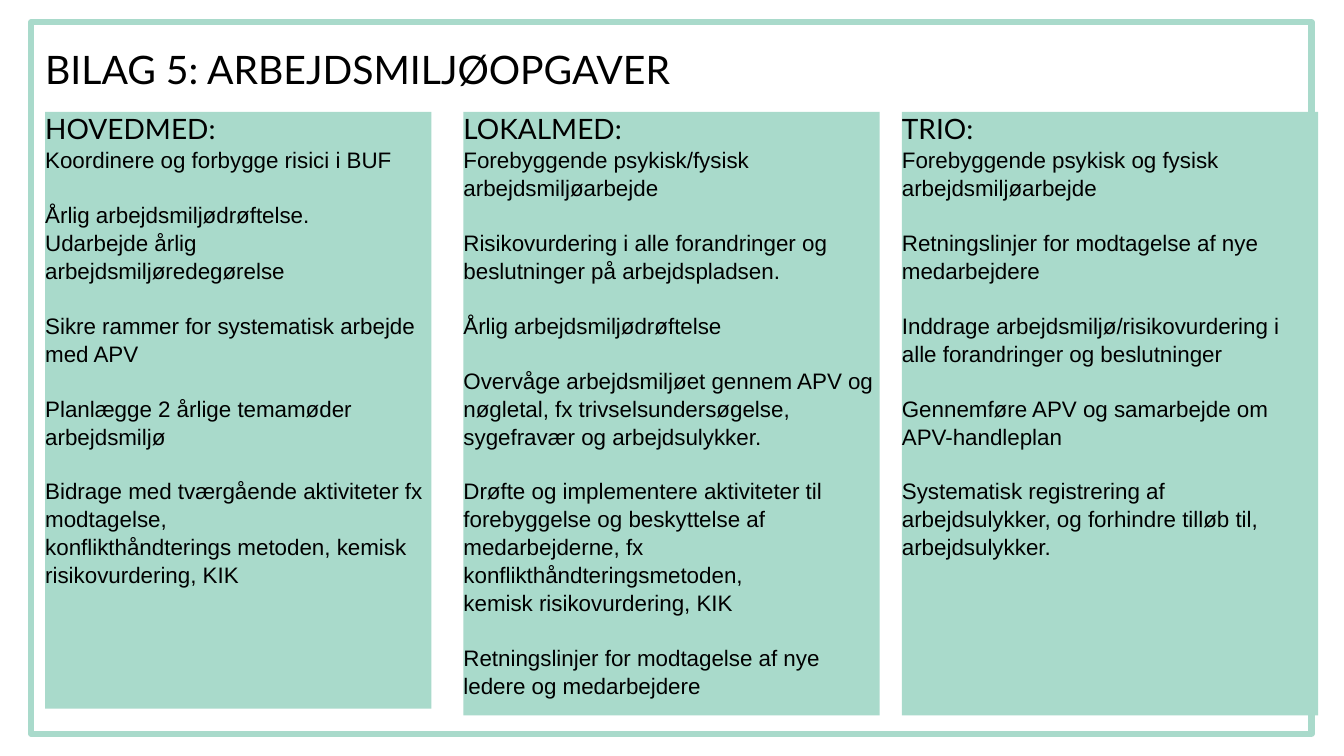
from pptx import Presentation
from pptx.dml.color import RGBColor
from pptx.enum.shapes import MSO_SHAPE
from pptx.enum.text import MSO_ANCHOR, PP_ALIGN
from pptx.util import Cm, Pt

RECTANGLE = MSO_SHAPE.RECTANGLE
TOP = MSO_ANCHOR.TOP
LEFT = PP_ALIGN.LEFT

COLORS = {"mint": "A9DACB", "text": "000000"}
HEADING_FONT = "Lato"
BODY_FONT = "Arial"
BODY_SIZE = 16
LINE_SPACING = 1.04
TASK_GAP = Pt(19.2)
COLUMN_TOP = 2.82

# Left, width and height in cm, heading, tasks; each task is a list of paragraphs.
COLUMNS = [
    (1.14, 9.73, 15.04, "HOVEDMED:", [
        ["Koordinere og forbygge risici i BUF"],
        ["Årlig arbejdsmiljødrøftelse.",
         "Udarbejde årlig arbejdsmiljøredegørelse"],
        ["Sikre rammer for systematisk arbejde med APV"],
        ["Planlægge 2 årlige temamøder arbejdsmiljø"],
        ["Bidrage med tværgående aktiviteter fx modtagelse,",
         "konflikthåndterings metoden, kemisk risikovurdering, KIK"],
    ]),
    (11.68, 10.49, 15.21, "LOKALMED:", [
        ["Forebyggende psykisk/fysisk arbejdsmiljøarbejde"],
        ["Risikovurdering i alle forandringer og",
         "beslutninger på arbejdspladsen."],
        ["Årlig arbejdsmiljødrøftelse"],
        ["Overvåge arbejdsmiljøet gennem APV og nøgletal, "
         "fx trivselsundersøgelse, sygefravær og arbejdsulykker."],
        ["Drøfte og implementere aktiviteter til forebyggelse og beskyttelse "
         "af medarbejderne, fx konflikthåndteringsmetoden,",
         "kemisk risikovurdering, KIK"],
        ["Retningslinjer for modtagelse af nye ledere og medarbejdere"],
    ]),
    (22.73, 10.49, 15.21, "TRIO:", [
        ["Forebyggende psykisk og fysisk arbejdsmiljøarbejde"],
        ["Retningslinjer for modtagelse af nye medarbejdere"],
        ["Inddrage arbejdsmiljø/risikovurdering i alle forandringer "
         "og beslutninger"],
        ["Gennemføre APV og samarbejde om APV-handleplan"],
        ["Systematisk registrering af arbejdsulykker, og forhindre tilløb til, "
         "arbejdsulykker."],
    ]),
]


def color(name):
    return RGBColor.from_string(COLORS[name])


def prepare_text_frame(shape):
    """Make the text wrap, start at the top and fill the shape without margins."""
    text_frame = shape.text_frame
    text_frame.word_wrap = True
    text_frame.vertical_anchor = TOP
    text_frame.margin_left = text_frame.margin_right = 0
    text_frame.margin_top = text_frame.margin_bottom = 0
    return text_frame


def write_paragraph(paragraph, text, font_name, size):
    paragraph.text = text
    paragraph.alignment = LEFT
    paragraph.font.name = font_name
    paragraph.font.size = Pt(size)
    paragraph.font.color.rgb = color("text")


def add_rectangle(slide, left, top, width, height):
    shape = slide.shapes.add_shape(
        RECTANGLE, Cm(left), Cm(top), Cm(width), Cm(height))
    shape.shadow.inherit = False
    return shape


def add_frame(slide):
    frame = add_rectangle(slide, 0.79, 0.56, 32.26, 17.93)
    frame.fill.background()
    frame.line.color.rgb = color("mint")
    frame.line.width = Pt(4.5)


def add_title(slide, text):
    title = slide.shapes.add_textbox(Cm(1.14), Cm(1.14), Cm(23.42), Cm(1.19))
    text_frame = prepare_text_frame(title)
    write_paragraph(text_frame.paragraphs[0], text, HEADING_FONT, 28)


def add_column(slide, left, width, height, heading, tasks):
    column = add_rectangle(slide, left, COLUMN_TOP, width, height)
    column.fill.solid()
    column.fill.fore_color.rgb = color("mint")
    column.line.fill.background()
    text_frame = prepare_text_frame(column)
    write_paragraph(text_frame.paragraphs[0], heading, HEADING_FONT, 20)
    for task_index, task in enumerate(tasks):
        for line_index, text in enumerate(task):
            paragraph = text_frame.add_paragraph()
            write_paragraph(paragraph, text, BODY_FONT, BODY_SIZE)
            paragraph.line_spacing = LINE_SPACING
            if task_index > 0 and line_index == 0:
                paragraph.space_before = TASK_GAP


def main():
    presentation = Presentation()
    presentation.slide_width = Cm(33.87)
    presentation.slide_height = Cm(19.05)
    slide = presentation.slides.add_slide(presentation.slide_layouts[6])
    add_frame(slide)
    add_title(slide, "BILAG 5: ARBEJDSMILJØOPGAVER")
    for column in COLUMNS:
        add_column(slide, *column)
    presentation.save("out.pptx")


if __name__ == "__main__":
    main()
